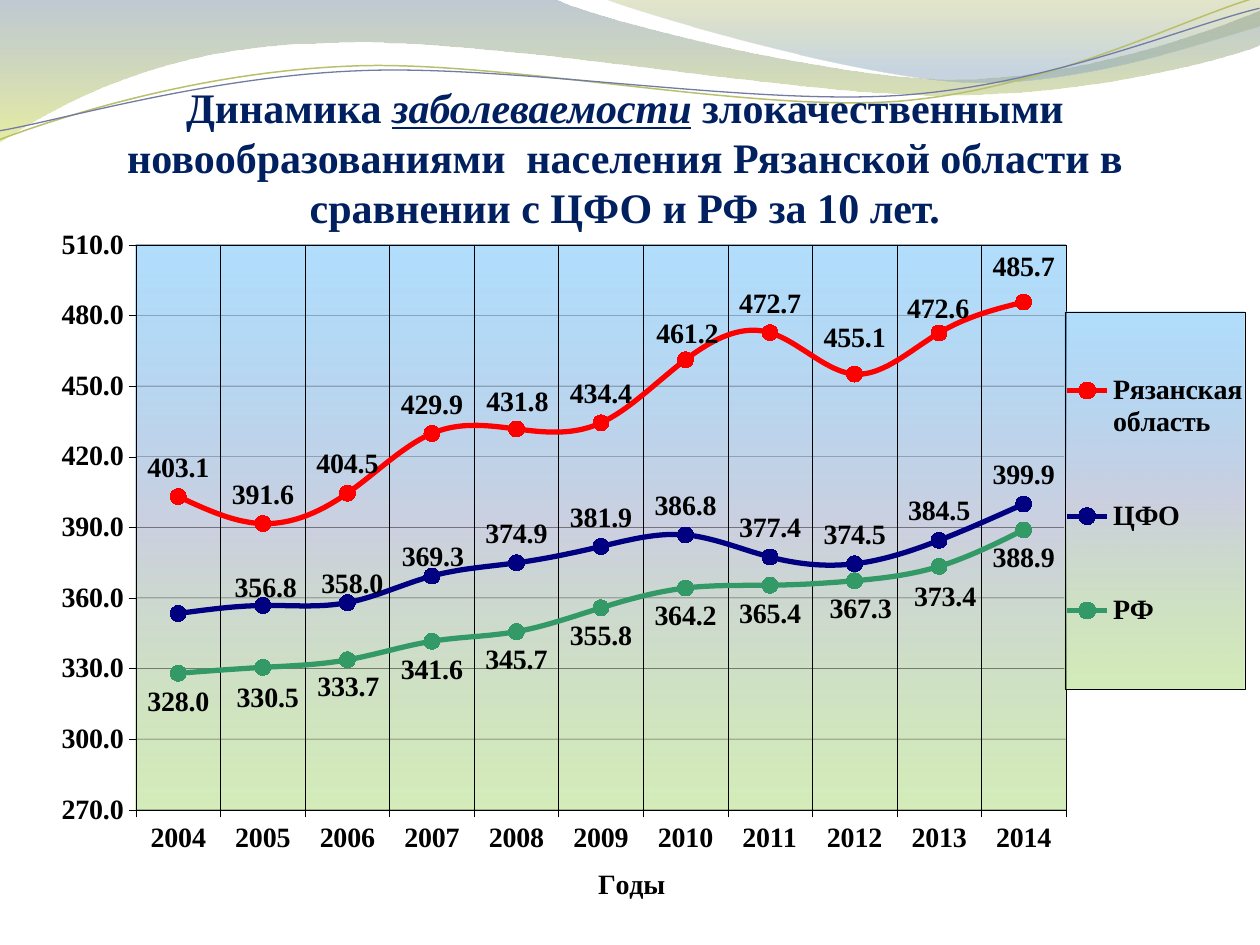
from math import cos, radians, sin

from lxml import etree
from pptx import Presentation
from pptx.chart.data import CategoryChartData
from pptx.dml.color import RGBColor
from pptx.enum.chart import XL_CHART_TYPE, XL_LABEL_POSITION, XL_LEGEND_POSITION, XL_MARKER_STYLE, XL_TICK_MARK
from pptx.enum.text import MSO_AUTO_SIZE, PP_ALIGN
from pptx.oxml import parse_xml
from pptx.oxml.ns import nsdecls, qn
from pptx.util import Pt

ABOVE, BELOW = XL_LABEL_POSITION.ABOVE, XL_LABEL_POSITION.BELOW
OUTSIDE = XL_TICK_MARK.OUTSIDE
PX = 914400 / 126
THEME = {
    "font": "Times New Roman", "title_pt": 24, "chart_pt": 16,
    "title": "002060", "ink": "000000", "thin_pt": 0.25,
    # gradient stops: position %, colour, opacity %
    "sky": [(0, "85CBFB", 63), (50, "CCD0E0", 100), (100, "BDE294", 64)],
}

TITLE = [("Динамика ", False), ("заболеваемости", True),
         (" злокачественными новообразованиями  населения Рязанской области "
          "в сравнении с ЦФО и РФ за 10 лет.", False)]
TITLE_BOX = (44, 75, 1162, 165)
CHART_BOX = (25, 185, 1235, 735)
PLOT_BOX = (136, 245, 930, 565)
LEGEND_BOX = (1065, 312, 180, 377)
AXIS_TITLE_AT = (593, 861)

AXIS_TITLE = "Годы"
YEARS = [str(year) for year in range(2004, 2015)]
# nudges: year -> label shift (dx, dy) in px; hidden: years with no label
SERIES = [
    {"name": "Рязанская область", "color": "FF0000", "labels": ABOVE, "hidden": [],
     "values": [403.1, 391.6, 404.5, 429.9, 431.8, 434.4, 461.2, 472.7, 455.1, 472.6, 485.7],
     "nudges": {"2008": (1, 2), "2010": (2, 3), "2012": (0, -7), "2013": (-1, 5), "2014": (0, -6)}},
    {"name": "ЦФО", "color": "000080", "labels": ABOVE, "hidden": ["2004"],
     "values": [353.4, 356.8, 358.0, 369.3, 374.9, 381.9, 386.8, 377.4, 374.5, 384.5, 399.9],
     "nudges": {"2005": (3, 11), "2006": (5, 10), "2007": (1, 10)}},
    {"name": "РФ", "color": "339966", "labels": BELOW, "hidden": [],
     "values": [328.0, 330.5, 333.7, 341.6, 345.7, 355.8, 364.2, 365.4, 367.3, 373.4, 388.9],
     "nudges": {"2005": (5, 2), "2006": (1, -1), "2012": (6, 0), "2013": (6, 2)}},
]

# A pair is a straight step; six numbers are a cubic curve.
BANDS = [
    ([(0, 0), (554, -1), (600, 21, 837, 79, 955, 79), (1075, 79, 1207, 33, 1260, 11),
      (1261, 45), (1239, 55, 1096, 96, 940, 95), (784, 95, 481, 35, 324, 43),
      (163, 45, 58, 105, -1, 142)],
     [(0, "72889B", 45), (100, "D3DE57", 55)]),
    ([(604, -1), (641, 14, 859, 78, 969, 82), (1079, 86, 1211, 40, 1260, 26), (1260, 0)],
     [(0, "A4AC50", 30), (80, "84A3BD", 45)]),
]
WAVE_TILT = -2.7
# steps, centre of the wave, colour, width in points
WAVES = [
    ([(0, 140), (60, 117, 199, 72, 349, 66), (498, 59, 747, 112, 898, 101),
      (1050, 89, 1182, 19, 1257, -3)], (629, 72), "B9C06C", 0.85),
    ([(0, 131), (59, 121, 207, 77, 357, 71), (508, 64, 752, 106, 903, 95),
      (1053, 84, 1186, 26, 1260, 8)], (629, 74), "727CA2", 0.75),
]


def rgb(color):
    return RGBColor.from_string(color)


def emu(box):
    return [round(v * PX) for v in box]


def gradient(stops):
    """Top-to-bottom gradient fill element."""
    marks = "".join(
        f'<a:gs pos="{pos * 1000}"><a:srgbClr val="{color}">'
        f'<a:alpha val="{opacity * 1000}"/></a:srgbClr></a:gs>'
        for pos, color, opacity in stops)
    return (f'<a:gradFill {nsdecls("a")} rotWithShape="1"><a:gsLst>{marks}</a:gsLst>'
            '<a:lin ang="5400000" scaled="0"/></a:gradFill>')


def level(steps, centre):
    """Turn the steps back by the tilt that the finished shape gets."""
    cx, cy = centre
    c, s = cos(radians(-WAVE_TILT)), sin(radians(-WAVE_TILT))
    turned = []
    for step in steps:
        flat = []
        for x, y in zip(step[::2], step[1::2]):
            flat += [cx + (x - cx) * c - (y - cy) * s, cy + (x - cx) * s + (y - cy) * c]
        turned.append(flat)
    return turned


def add_outline(slide, steps, close):
    """Freeform whose six-number steps become cubic curves."""
    points = [point for step in steps for point in zip(step[::2], step[1::2])]
    builder = slide.shapes.build_freeform(*points[0], scale=PX)
    builder.add_line_segments(points[1:], close=close)
    outline = builder.convert_to_shape()
    outline.shadow.inherit = False
    segments = iter(outline._element.findall(f".//{qn('a:lnTo')}"))
    for step in steps[1:]:
        first = next(segments)
        if len(step) == 6:
            first.tag = qn("a:cubicBezTo")
            for extra in (next(segments), next(segments)):
                first.append(extra[0])
                extra.getparent().remove(extra)
    return outline


def add_decor(slide):
    for steps, stops in BANDS:
        band = add_outline(slide, steps, True)
        band.line.fill.background()
        band.fill.background()
        no_fill = band.fill._xPr.find(qn("a:noFill"))
        no_fill.getparent().replace(no_fill, parse_xml(gradient(stops)))
    for steps, centre, color, width in WAVES:
        wave = add_outline(slide, level(steps, centre), False)
        wave.rotation = WAVE_TILT
        wave.fill.background()
        wave.line.color.rgb = rgb(color)
        wave.line.width = Pt(width)


def add_title(slide):
    frame = slide.shapes.add_textbox(*emu(TITLE_BOX)).text_frame
    frame.word_wrap = True
    frame.auto_size = MSO_AUTO_SIZE.SHAPE_TO_FIT_TEXT
    paragraph = frame.paragraphs[0]
    paragraph.alignment = PP_ALIGN.CENTER
    set_font(paragraph.font, THEME["title_pt"], THEME["title"])
    for text, stressed in TITLE:
        run = paragraph.add_run()
        run.text = text
        if stressed:
            run.font.italic = run.font.underline = True


def set_font(font, size=THEME["chart_pt"], color=THEME["ink"]):
    font.name, font.size, font.bold = THEME["font"], Pt(size), True
    font.color.rgb = rgb(color)


def manual_layout(**values):
    fields = "".join(f'<c:{key} val="{value}"/>' for key, value in values.items())
    return parse_xml(f'<c:layout {nsdecls("c")}><c:manualLayout>{fields}</c:manualLayout></c:layout>')


def place(parent, after, position, inner=False):
    """Fix a chart part at a px position (x, y[, w, h]) on the slide."""
    left, top, width, height = CHART_BOX
    shares = [(position[0] - left) / width, (position[1] - top) / height]
    if len(position) == 4:
        shares += [position[2] / width, position[3] / height]
    values = {"layoutTarget": "inner"} if inner else {}
    values |= {"xMode": "edge", "yMode": "edge"}
    values |= {key: round(share, 4) for key, share in zip("xywh", shares)}
    for old in parent.findall(qn("c:layout")):
        parent.remove(old)
    layout = manual_layout(**values)
    if after is None:
        parent.insert(0, layout)
    else:
        parent.find(qn(after)).addnext(layout)


def sky_panel():
    return parse_xml(
        f'<c:spPr {nsdecls("c", "a")}>{gradient(THEME["sky"])}<a:ln w="{Pt(THEME["thin_pt"])}">'
        f'<a:solidFill><a:srgbClr val="{THEME["ink"]}"/></a:solidFill></a:ln></c:spPr>')


def style_axis(axis):
    axis.major_tick_mark = OUTSIDE
    axis.has_major_gridlines = True
    set_font(axis.tick_labels.font)
    for line in (axis.format.line, axis.major_gridlines.format.line):
        line.color.rgb = rgb(THEME["ink"])
        line.width = Pt(THEME["thin_pt"])


def style_series(series, facts):
    color = rgb(facts["color"])
    series.smooth = True
    series.format.line.color.rgb = color
    series.format.line.width = Pt(3)
    series.marker.style, series.marker.size = XL_MARKER_STYLE.CIRCLE, 9
    series.marker.format.fill.solid()
    series.marker.format.fill.fore_color.rgb = color
    series.marker.format.line.color.rgb = color
    labels = series.data_labels
    labels.show_value, labels.position = True, facts["labels"]
    labels.number_format, labels.number_format_is_linked = "0.0", False
    set_font(labels.font)
    for year, (dx, dy) in facts["nudges"].items():
        label = series.points[YEARS.index(year)].data_label
        set_font(label.font)
        label.position = facts["labels"]
        index = labels._element.xpath(f'c:dLbl/c:idx[@val="{YEARS.index(year)}"]')[0]
        index.addnext(manual_layout(x=round(dx / CHART_BOX[2], 4), y=round(dy / CHART_BOX[3], 4)))
    for year in facts["hidden"]:
        hidden = parse_xml(f'<c:dLbl {nsdecls("c")}><c:idx val="{YEARS.index(year)}"/></c:dLbl>')
        etree.SubElement(hidden, qn("c:delete")).set("val", "1")
        labels._element.insert(0, hidden)


def add_incidence_chart(slide):
    data = CategoryChartData(number_format="0.0")
    data.categories = YEARS
    for facts in SERIES:
        data.add_series(facts["name"], facts["values"])
    chart = slide.shapes.add_chart(XL_CHART_TYPE.LINE_MARKERS, *emu(CHART_BOX), data).chart
    set_font(chart.font)
    chart.has_title = False
    chart.plots[0].vary_by_categories = False
    for series, facts in zip(chart.plots[0].series, SERIES):
        style_series(series, facts)

    years, rates = chart.category_axis, chart.value_axis
    style_axis(years)
    style_axis(rates)
    rates.minimum_scale, rates.maximum_scale, rates.major_unit = 270, 510, 30
    rates.tick_labels.number_format = "0.0"
    rates.tick_labels.number_format_is_linked = False
    grid_color = rates._element.find(f"{qn('c:majorGridlines')}//{qn('a:srgbClr')}")
    etree.SubElement(grid_color, qn("a:alpha")).set("val", "67000")
    caption = years.axis_title.text_frame.paragraphs[0]
    caption.text = AXIS_TITLE
    set_font(caption.font)
    place(years.axis_title._element, "c:tx", AXIS_TITLE_AT)

    chart.has_legend = True
    legend = chart.legend
    legend.position, legend.include_in_layout = XL_LEGEND_POSITION.RIGHT, False
    set_font(legend.font)
    place(legend._element, "c:legendPos", LEGEND_BOX)
    legend._element.find(qn("c:txPr")).addprevious(sky_panel())
    plot_area = chart._chartSpace.chart.plotArea
    place(plot_area, None, PLOT_BOX, inner=True)
    plot_area.append(sky_panel())


def main():
    deck = Presentation()
    deck.slide_width, deck.slide_height = emu((1260, 945))
    slide = deck.slides.add_slide(deck.slide_layouts[6])
    add_decor(slide)
    add_title(slide)
    add_incidence_chart(slide)
    deck.save("out.pptx")


if __name__ == "__main__":
    main()
